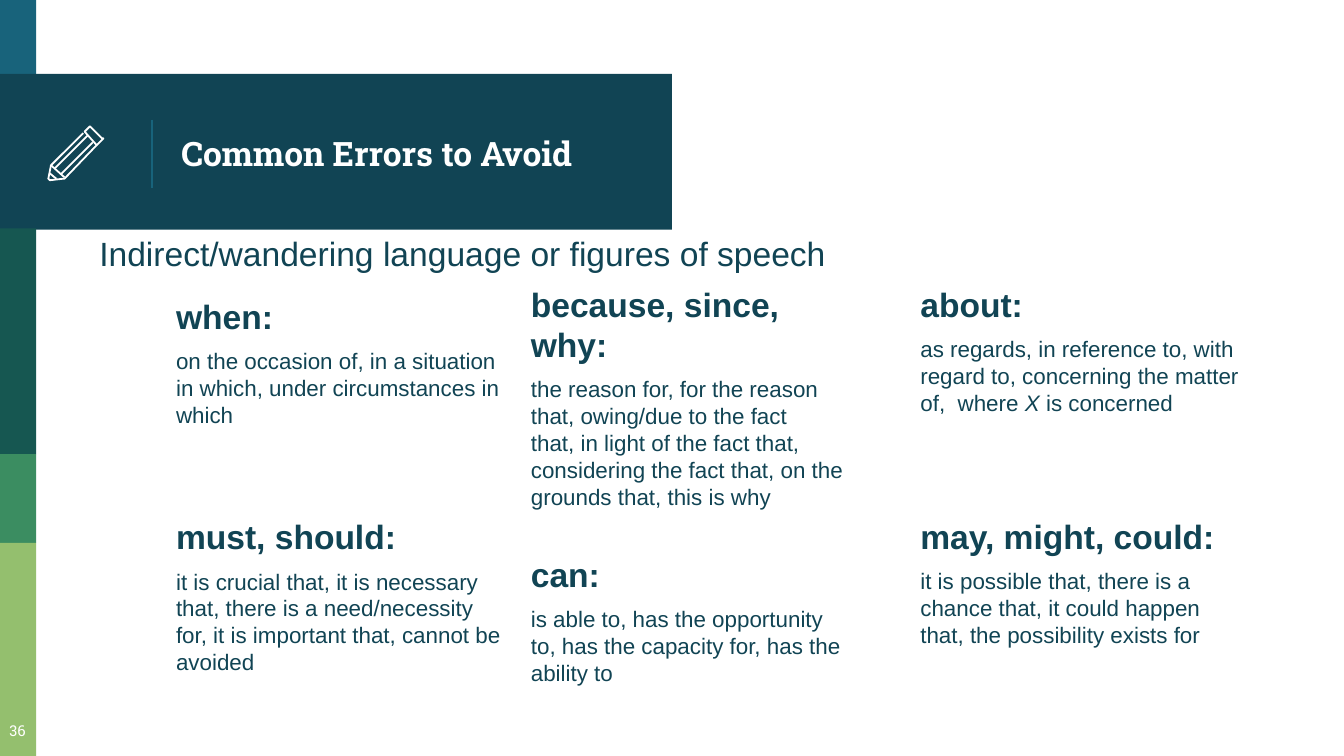
from dataclasses import dataclass

from lxml import etree
from pptx import Presentation, util as u
from pptx.dml.color import RGBColor
from pptx.enum import shapes, text
from pptx.oxml.ns import qn

TITLE = "Common Errors to Avoid"
SUBTITLE = "Indirect/wandering language or figures of speech"
PAGE_NUMBER = "36"

# Each entry: (heading, wordy phrases to avoid); *stars* mark italics.
COLUMNS = [
    {"left": 1.21, "tops": (2.1, 3.74), "entries": [
        ("when:", ["on the occasion of", "in a situation in which",
                   "under circumstances in which"]),
        ("must, should:", ["it is crucial that", "it is necessary that",
                           "there is a need/necessity for",
                           "it is important that", "cannot be avoided"]),
    ]},
    {"left": 3.85, "tops": (2.01, 4.02), "entries": [
        ("because, since, why:", [
            "the reason for", "for the reason that", "owing/due to the fact that",
            "in light of the fact that, considering the fact that, "
            "on the grounds that, this is why"]),
        ("can:", ["is able to", "has the opportunity to",
                  "has the capacity for", "has the ability to"]),
    ]},
    {"left": 6.75, "tops": (2.01, 3.74), "entries": [
        ("about:", ["as regards", "in reference to", "with regard to",
                    "concerning the matter of", " where *X* is concerned"]),
        ("may, might, could:", ["it is possible that", "there is a chance that",
                                "it could happen that",
                                "the possibility exists for"]),
    ]},
]
ENTRY_SIZE = (2.64, 1.43)
PHRASE_GAP = "," + chr(160)  # the no-break space keeps a phrase's first word with the comma
SLIDE_WIDTH = 10
SLIDE_HEIGHT = SLIDE_WIDTH * 9 / 16


@dataclass(frozen=True)
class Theme:
    blue: str = "18637B"
    navy: str = "114454"
    teal: str = "165751"
    green: str = "3B8D61"
    lime: str = "94BF6E"
    white: str = "FFFFFF"
    slab: str = "Roboto Slab"
    sans: str = "Arial"
    large: int = 18
    body: int = 12
    small: int = 8
    inset: float = 0.1
    space_before: int = 6
    line_spacing: float = 1.0


THEME = Theme()
SIDEBAR = 0.27
BANDS = [  # left, top, width, height, colour
    (0, 0, SIDEBAR, 0.58, THEME.blue),
    (0, 0.55, SLIDE_WIDTH / 2, 1.16, THEME.navy),
    (0, 1.7, SIDEBAR, 1.68, THEME.teal),
    (0, 3.38, SIDEBAR, 0.66, THEME.green),
    (0, 4.04, SIDEBAR, SLIDE_HEIGHT - 4.04, THEME.lime),
]

# Pencil outlines in hundredths of an inch: (points, closed)
PENCIL_OUTLINES = [
    ([(76, 103), (68, 95), (67, 94), (66, 95), (63, 98), (72, 108),
      (76, 104), (77, 103)], True),
    ([(62, 99), (38, 123), (36, 133), (37, 134), (38, 134), (47, 133),
      (48, 133), (72, 108)], False),
]
PENCIL_LINES = [
    (0.69, 1.06, 0.45, 1.3),
    (0.41, 1.25, 0.65, 1.01),
    (0.42, 1.33, 0.37, 1.29),
    (0.38, 1.23, 0.48, 1.32),
]


def inches(*values):
    return [u.Inches(value) for value in values]


def rgb(colour):
    return RGBColor.from_string(colour)


def add_band(page, left, top, width, height, colour):
    band = page.shapes.add_shape(shapes.MSO_SHAPE.RECTANGLE,
                                 *inches(left, top, width, height))
    band.shadow.inherit = False
    band.fill.solid()
    band.fill.fore_color.rgb = rgb(colour)
    band.line.fill.background()


def add_line(page, ends, colour, weight):
    line = page.shapes.add_connector(shapes.MSO_CONNECTOR.STRAIGHT, *inches(*ends))
    line.line.color.rgb = rgb(colour)
    line.line.width = u.Pt(weight)
    etree.SubElement(line._element.spPr, qn("a:effectLst"))


def add_pencil(page):
    for points, closed in PENCIL_OUTLINES:
        builder = page.shapes.build_freeform(*points[0], scale=u.Inches(0.01))
        builder.add_line_segments(points[1:], close=closed)
        outline = builder.convert_to_shape()
        outline.shadow.inherit = False
        outline.fill.background()
        outline.line.color.rgb = rgb(THEME.white)
        outline.line.width = u.Pt(0.96)
    for ends in PENCIL_LINES:
        add_line(page, ends, THEME.white, 0.96)


def prepare(box, left, top, width, height, anchor=text.MSO_ANCHOR.TOP):
    """Place a text box or placeholder and give its frame the common settings."""
    box.left, box.top, box.width, box.height = inches(left, top, width, height)
    frame = box.text_frame
    frame.word_wrap = True
    frame.auto_size = text.MSO_AUTO_SIZE.NONE
    frame.vertical_anchor = anchor
    frame.margin_left = frame.margin_right = u.Inches(THEME.inset)
    frame.margin_top = frame.margin_bottom = u.Inches(THEME.inset)
    return frame


def style(para, size, colour=THEME.navy, font=THEME.sans, bold=False,
          align=text.PP_ALIGN.LEFT):
    para.alignment = align
    for span in para.runs:
        span.font.size = u.Pt(size)
        span.font.name = font
        span.font.bold = bold
        span.font.color.rgb = rgb(colour)


def space(para):
    """Set paragraph spacing and drop the inherited bullet and indent."""
    para.space_before = u.Pt(THEME.space_before)
    para.line_spacing = THEME.line_spacing
    props = para._p.get_or_add_pPr()
    props.set("marL", "0")
    props.set("indent", "0")
    etree.SubElement(props, qn("a:buNone"))


def fill_entry(frame, heading, phrases):
    frame.text = heading
    head = frame.paragraphs[0]
    style(head, THEME.large, bold=True)
    detail = frame.add_paragraph()
    for number, part in enumerate(PHRASE_GAP.join(phrases).split("*")):
        span = detail.add_run()
        span.text = part
        span.font.italic = number % 2 == 1
    style(detail, THEME.body)
    for para in (head, detail):
        space(para)


def main():
    deck = Presentation()
    deck.slide_width, deck.slide_height = inches(SLIDE_WIDTH, SLIDE_HEIGHT)
    page = deck.slides.add_slide(deck.slide_layouts.get_by_name("Comparison"))
    title = page.shapes.title
    bodies = [box for box in page.placeholders if box.placeholder_format.idx > 0]

    for band in BANDS:
        add_band(page, *band)
    add_line(page, (1.13, 0.89, 1.13, 1.4), THEME.blue, 0.75)
    add_pencil(page)

    frame = prepare(title, 1.25, 0.58, 3.51, 1.12, text.MSO_ANCHOR.MIDDLE)
    frame.text = TITLE
    style(frame.paragraphs[0], THEME.large, THEME.white, THEME.slab, bold=True)
    page.shapes._spTree.append(title._element)  # bring above the banner

    frame = prepare(page.shapes.add_textbox(0, 0, 0, 0), 0.64, 1.63, 9.05, 0.3)
    frame.text = SUBTITLE
    style(frame.paragraphs[0], THEME.large)
    space(frame.paragraphs[0])

    for column in COLUMNS:
        for top, entry in zip(column["tops"], column["entries"]):
            box = bodies.pop(0) if bodies else page.shapes.add_textbox(0, 0, 0, 0)
            fill_entry(prepare(box, column["left"], top, *ENTRY_SIZE), *entry)

    frame = prepare(page.shapes.add_textbox(0, 0, 0, 0), -0.06, 5.27, 0.38, 0.35)
    frame.text = PAGE_NUMBER
    style(frame.paragraphs[0], THEME.small, THEME.white, THEME.slab,
          align=text.PP_ALIGN.CENTER)

    deck.save("out.pptx")


if __name__ == "__main__":
    main()
